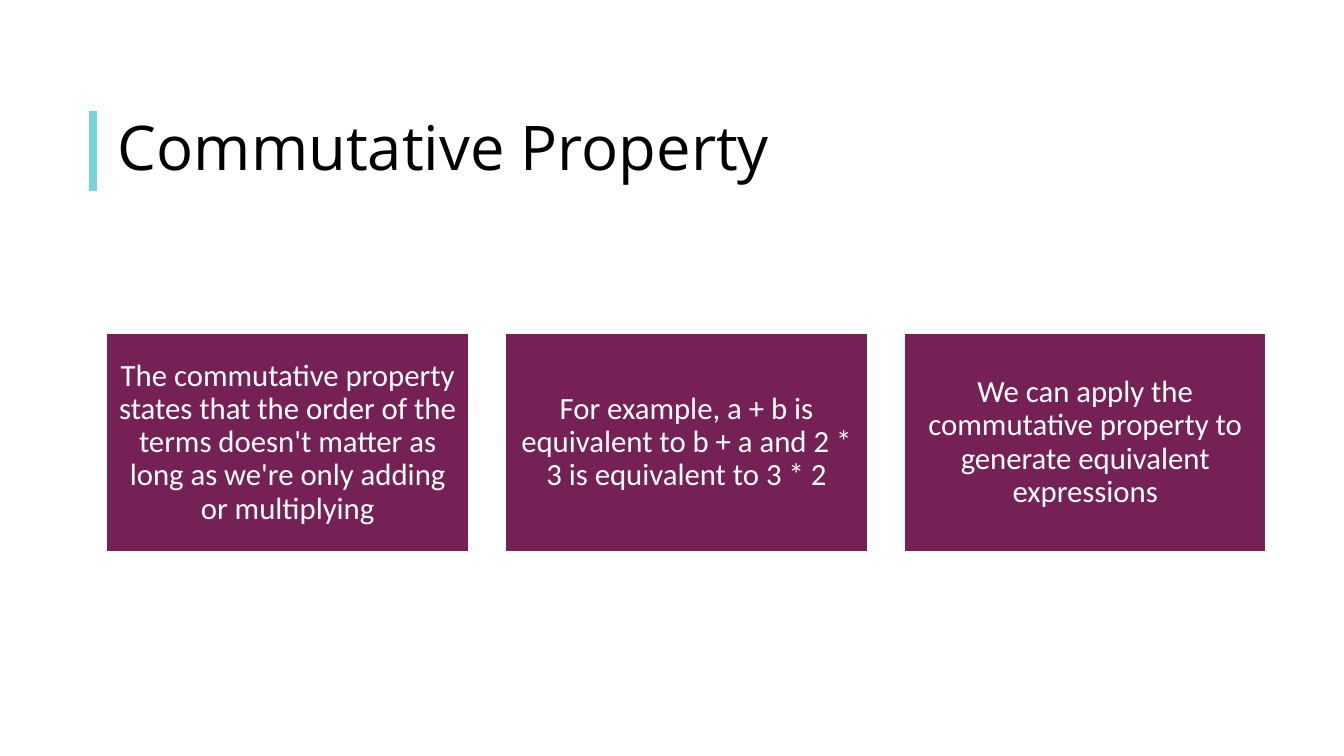
"""Build the Commutative Property slide with three statement cards."""
from dataclasses import dataclass

from pptx import Presentation
from pptx.dml.color import RGBColor
from pptx.enum.shapes import MSO_CONNECTOR, MSO_SHAPE
from pptx.enum.text import MSO_ANCHOR as Anchor, PP_ALIGN as Align
from pptx.oxml.ns import qn
from pptx.slide import Slide
from pptx.util import Cm, Pt
from lxml.etree import SubElement

TEAL = RGBColor(0x76, 0xD5, 0xD4)
PLUM = RGBColor(0x75, 0x21, 0x56)
WHITE = RGBColor(0xFF, 0xFF, 0xFF)
BLACK = RGBColor(0x00, 0x00, 0x00)

CARD_LEFT, CARD_TOP = 2.69, 8.41
CARD_WIDTH, CARD_HEIGHT = 9.12, 5.49
CARD_PITCH = 10.05
TITLE_TOP, TITLE_HEIGHT = 2.79, 2.03


@dataclass
class Card:
    column: int
    text: str


CARDS = [
    Card(0, "The commutative property states that the order of the terms "
            "doesn't matter as long as we're only adding or multiplying"),
    Card(1, "For example, a + b is equivalent to b + a and 2 * 3 is "
            "equivalent to 3 * 2"),
    Card(2, "We can apply the commutative property to generate equivalent "
            "expressions"),
]


def write(sp, text: str, *, font: str, size: float, color: RGBColor,
          align: Align = Align.LEFT, inset: float = 0.25) -> None:
    tf = sp.text_frame
    tf.word_wrap = True
    tf.vertical_anchor = Anchor.MIDDLE
    tf.margin_left = tf.margin_right = Cm(inset)
    tf.margin_top = tf.margin_bottom = Cm(inset / 2 if align == Align.LEFT else inset)
    p = tf.paragraphs[0]
    p.alignment = align
    p.line_spacing = 0.9
    r = p.add_run()
    r.text = text
    r.font.name = font
    r.font.size = Pt(size)
    r.font.color.rgb = color


def draw_title(s: Slide, text: str) -> None:
    x, bottom = Cm(2.34), Cm(TITLE_TOP + TITLE_HEIGHT)
    bar = s.shapes.add_connector(MSO_CONNECTOR.STRAIGHT, x, Cm(TITLE_TOP), x, bottom)
    bar.line.color.rgb = TEAL
    bar.line.width = Pt(6)
    SubElement(bar._element.spPr, qn("a:effectLst"))
    sp = s.shapes.add_textbox(Cm(2.72), Cm(TITLE_TOP), Cm(29.21), Cm(TITLE_HEIGHT))
    write(sp, text, font="Open Sans", size=44, color=BLACK)


def draw_card(s: Slide, card: Card) -> None:
    sp = s.shapes.add_shape(
        MSO_SHAPE.RECTANGLE, Cm(CARD_LEFT + card.column * CARD_PITCH),
        Cm(CARD_TOP), Cm(CARD_WIDTH), Cm(CARD_HEIGHT))
    sp.shadow.inherit = False
    sp.fill.solid()
    sp.fill.fore_color.rgb = PLUM
    sp.line.color.rgb = WHITE
    sp.line.width = Pt(1)
    write(sp, card.text, font="Calibri", size=22, color=WHITE,
          align=Align.CENTER, inset=0.23)


def main() -> None:
    prs = Presentation()
    prs.slide_width, prs.slide_height = Cm(33.87), Cm(19.05)
    s = prs.slides.add_slide(prs.slide_layouts[6])
    draw_title(s, "Commutative Property")
    for card in CARDS:
        draw_card(s, card)
    prs.save("out.pptx")


if __name__ == "__main__":
    main()
